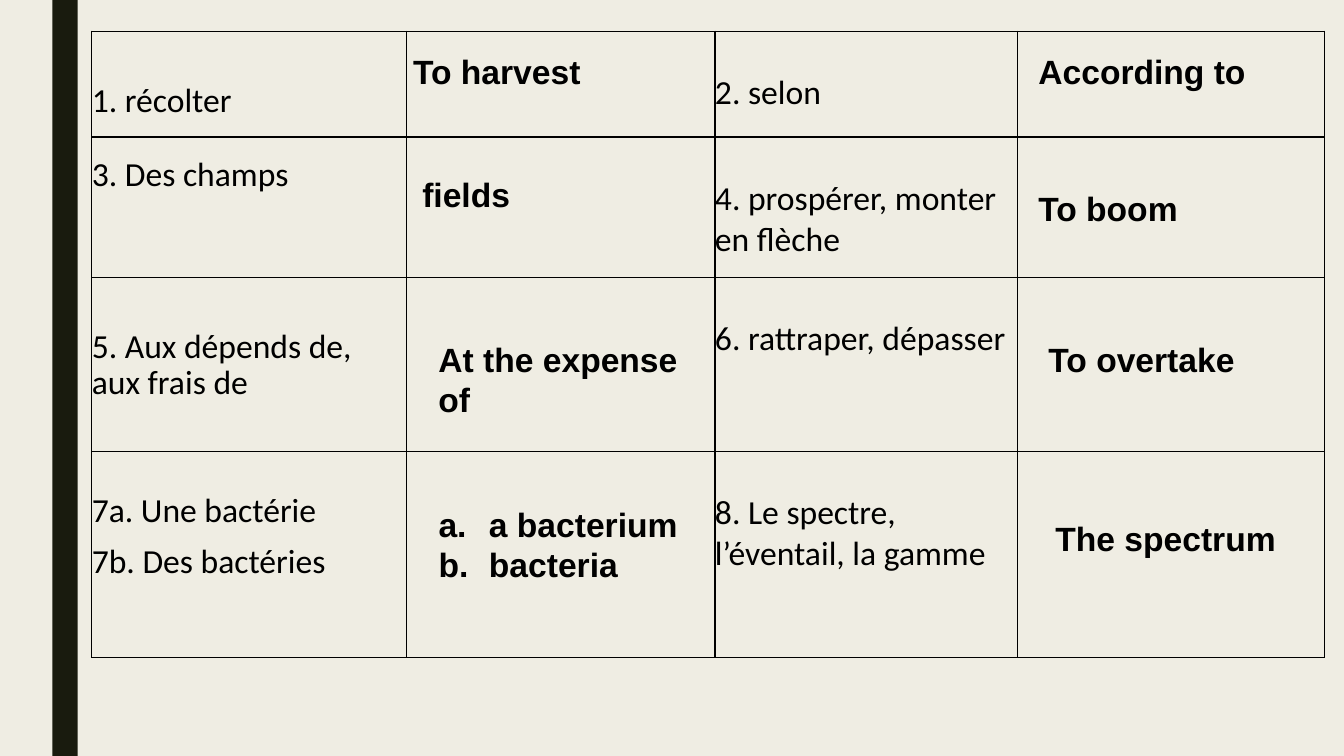
from pptx import Presentation, util as u
from pptx.dml.color import RGBColor
from pptx.enum import shapes, text
from pptx.oxml import parse_xml
from pptx.oxml.ns import nsdecls

COLOURS = {"paper": "EFEDE3", "bar": "191B0E", "ink": "000000"}
COLUMNS = [23.41, 22.96, 22.5, 22.88]
ROWS = [14, 18.53, 23.07, 27.2]

FRENCH = [
    (0, 0, 6.8, 0.9, ["1. récolter"]),
    (0, 2, 5.47, 1.0, ["2. selon"]),
    (1, 0, 3.87, u.Pt(20.6), ["3. Des champs"]),
    (1, 2, 5.47, 1.0, ["4. prospérer, monter en flèche"]),
    (2, 0, 6.8, 0.9, ["5. Aux dépends de, aux frais de"]),
    (2, 2, 5.47, 1.0, ["6. rattraper, dépasser"]),
    (3, 0, 5.47, 0.9, ["7a. Une bactérie", "7b. Des bactéries"]),
    (3, 2, 5.47, 1.0, ["8. Le spectre, l’éventail, la gamme"]),
]

ENGLISH = [
    ("To harvest", 30, 6.13, 18.15, 12.13),
    ("According to", 76.52, 6.13, 18.15, 12.13),
    ("fields", 30.68, 22.4, 18.15, 12.13),
    ("To boom", 76.52, 24.13, 18.15, 12.13),
    ("At the expense of", 31.88, 44.13, 21.9, 12.13),
    ("To overtake", 77.27, 44.13, 18.15, 6.67),
    ("The spectrum", 77.79, 67.87, 18.15, 6.67),
]


class VocabularySlide:
    size = u.Pt(24)

    def __init__(self, deck):
        self.width, self.height = deck.slide_width, deck.slide_height
        self.slide = deck.slides.add_slide(deck.slide_layouts[1])
        heading = self.slide.shapes.title.element
        heading.getparent().remove(heading)
        self.paint(self.slide.background.fill, "paper")

    def across(self, percent):
        return round(self.width * percent / 100)

    def down(self, percent):
        return round(self.height * percent / 100)

    def box(self, left, top, width, height):
        return self.across(left), self.down(top), self.across(width), self.down(height)

    def paint(self, fill, colour):
        fill.solid()
        fill.fore_color.rgb = RGBColor.from_string(COLOURS[colour])

    def style(self, paragraph, face, bold=False):
        font = paragraph.font
        font.name, font.size, font.bold = face, self.size, bold
        font.color.rgb = RGBColor.from_string(COLOURS["ink"])

    def bar(self, *place):
        bar = self.slide.shapes.add_shape(shapes.MSO_SHAPE.RECTANGLE, *self.box(*place))
        bar.shadow.inherit = False
        self.paint(bar.fill, "bar")
        bar.line.fill.background()

    def border(self, cell):
        properties = cell._tc.get_or_add_tcPr()
        for side in ("lnL", "lnR", "lnT", "lnB"):
            properties.append(parse_xml(
                f'<a:{side} {nsdecls("a")} w="12700"><a:solidFill>'
                f'<a:srgbClr val="{COLOURS["ink"]}"/></a:solidFill></a:{side}>'))

    def table(self, left, top, columns, rows, entries):
        place = self.box(left, top, sum(columns), sum(rows))
        grid = self.slide.shapes.add_table(len(rows), len(columns), *place).table
        grid.first_row = grid.horz_banding = False
        for column, share in zip(grid.columns, columns):
            column.width = self.across(share)
        for row, share in zip(grid.rows, rows):
            row.height = self.down(share)
        for cell in grid.iter_cells():
            self.border(cell)
            cell.fill.background()
        for row, column, offset, spacing, terms in entries:
            self.term(grid.cell(row, column), offset, spacing, terms)

    def term(self, cell, offset, spacing, terms):
        cell.margin_left = cell.margin_right = cell.margin_bottom = 0
        cell.margin_top = self.down(offset)
        cell.text = "\n".join(terms)
        for index, paragraph in enumerate(cell.text_frame.paragraphs):
            paragraph.line_spacing = spacing
            paragraph.space_before = u.Pt(10 if index else 0)
            self.style(paragraph, "Calibri")

    def answer(self, wording, *place):
        frame = self.slide.shapes.add_textbox(*self.box(*place)).text_frame
        frame.word_wrap = True
        frame.text = wording
        self.style(frame.paragraphs[0], "Arial", bold=True)

    def lettered(self, items, *place):
        body = self.slide.placeholders[1]
        body.left, body.top, body.width, body.height = self.box(*place)
        frame = body.text_frame
        frame.auto_size = text.MSO_AUTO_SIZE.NONE
        frame.text = "\n".join(items)
        for paragraph in frame.paragraphs:
            paragraph.space_before = u.Pt(0)
            properties = paragraph._p.get_or_add_pPr()
            properties.set("marL", str(u.Inches(0.5)))
            properties.set("indent", str(-u.Inches(0.5)))
            properties.append(parse_xml(f'<a:buAutoNum {nsdecls("a")} type="alphaLcPeriod"/>'))
            self.style(paragraph, "Arial", bold=True)


def main():
    deck = Presentation()
    deck.slide_width, deck.slide_height = u.Inches(13.33), u.Inches(7.5)
    page = VocabularySlide(deck)
    page.bar(3.9, 0, 1.88, 100)
    page.table(6.83, 4.13, COLUMNS, ROWS, FRENCH)
    for answer in ENGLISH:
        page.answer(*answer)
    page.lettered(["a bacterium", "bacteria"], 31.88, 66, 21.9, 22.93)
    deck.save("out.pptx")


if __name__ == "__main__":
    main()
